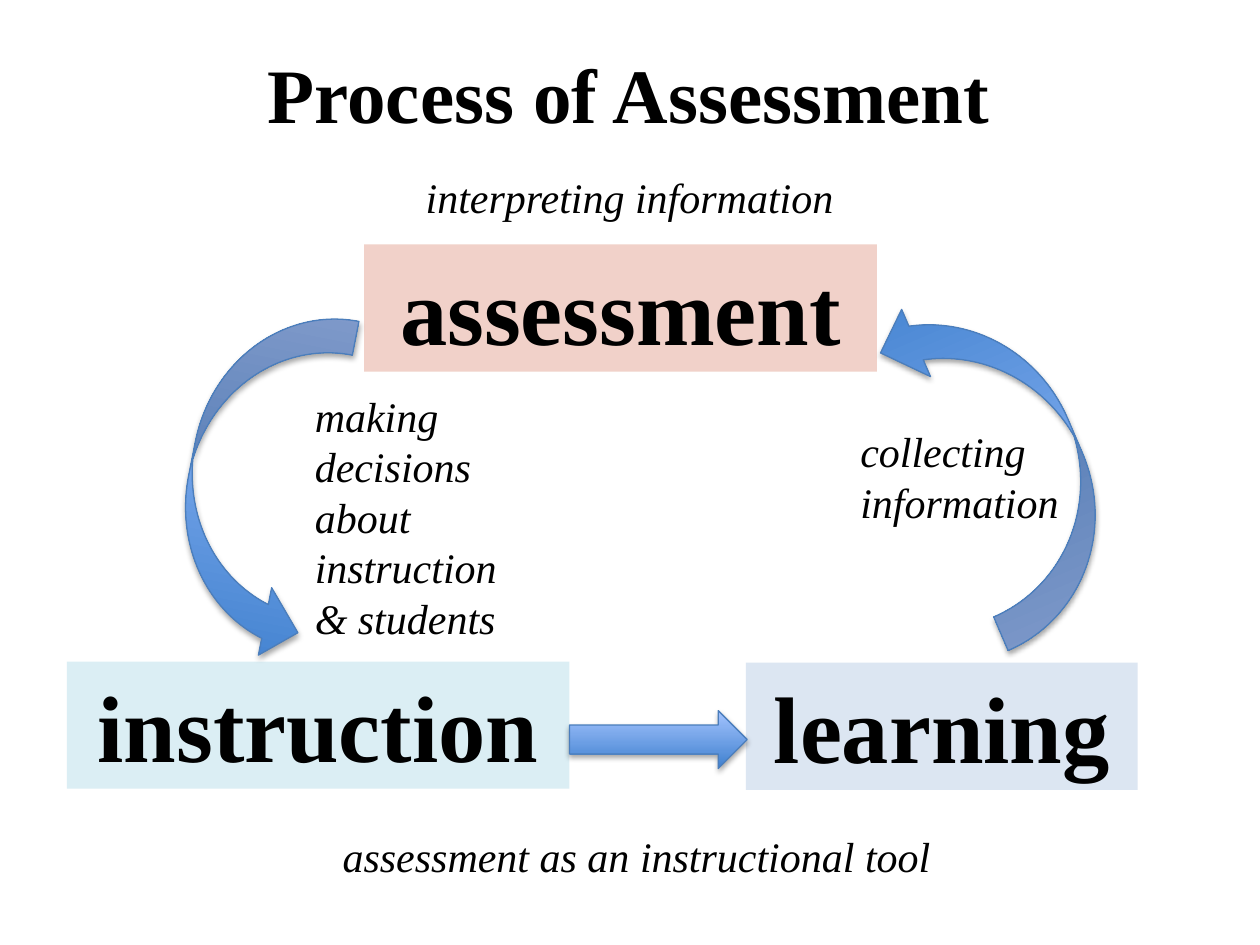
from dataclasses import dataclass

import pptx
import pptx.dml.color
import pptx.enum.shapes
import pptx.enum.text
import pptx.oxml
import pptx.util

Inches = pptx.util.Inches
Pt = pptx.util.Pt
RGB = pptx.dml.color.RGBColor.from_string
ALIGN = pptx.enum.text.PP_ALIGN
ANCHOR = pptx.enum.text.MSO_ANCHOR
SHAPE = pptx.enum.shapes.MSO_SHAPE


@dataclass(frozen=True)
class Theme:
    font: str = "Times New Roman"
    ink: str = "000000"
    instruction: str = "DBEEF4"
    learning: str = "DCE6F2"
    assessment: str = "F1D1C9"
    arrow_dark: str = "3F80CE"
    arrow_light: str = "A4C4FF"
    arrow_line: str = "4B7EBC"
    title_size: int = 44
    stage_size: int = 54
    note_size: int = 24


THEME = Theme()

SHADOW = (
    '<a:effectLst xmlns:a="http://schemas.openxmlformats.org/drawingml/2006/main">'
    '<a:outerShdw blurRad="40000" dist="23000" dir="5400000" rotWithShape="0">'
    '<a:srgbClr val="000000"><a:alpha val="35000"/></a:srgbClr>'
    "</a:outerShdw></a:effectLst>"
)


def add_text(s, box, text, size, bold=False, italic=False, align=ALIGN.LEFT, wrap=True):
    sp = s.shapes.add_textbox(*map(Inches, box))
    tf = sp.text_frame
    tf.word_wrap = wrap
    tf.auto_size = pptx.enum.text.MSO_AUTO_SIZE.SHAPE_TO_FIT_TEXT
    p = tf.paragraphs[0]
    p.alignment = align
    r = p.add_run()
    r.text = text
    r.font.name = THEME.font
    r.font.size = Pt(size)
    r.font.bold = bold
    r.font.italic = italic
    r.font.color.rgb = RGB(THEME.ink)
    return sp


def add_title(s, box, text):
    sp = add_text(s, box, text, THEME.title_size, bold=True, align=ALIGN.CENTER)
    sp.text_frame.auto_size = pptx.enum.text.MSO_AUTO_SIZE.NONE
    sp.text_frame.vertical_anchor = ANCHOR.MIDDLE


def add_stage(s, box, text, color):
    sp = add_text(s, box, text, THEME.stage_size, bold=True, align=ALIGN.CENTER, wrap=False)
    sp.fill.solid()
    sp.fill.fore_color.rgb = RGB(color)


def add_arrow(s, box, kind, rotation=0):
    sp = s.shapes.add_shape(kind, *map(Inches, box))
    sp.rotation = rotation
    sp.fill.gradient()
    sp.fill.gradient_angle = 90
    stops = sp.fill.gradient_stops
    for stop, position, color in zip(stops, (0, 1), (THEME.arrow_dark, THEME.arrow_light)):
        stop.position = position
        stop.color.rgb = RGB(color)
    sp.line.color.rgb = RGB(THEME.arrow_line)
    sp.line.width = Pt(0.75)
    sp._element.spPr.append(pptx.oxml.parse_xml(SHADOW))


def add_note(s, box, text):
    add_text(s, box, text, THEME.note_size, italic=True)


def add_cycle(s):
    add_stage(s, (0.53, 5.25, 3.99, 1.01), "instruction", THEME.instruction)
    add_stage(s, (5.92, 5.26, 3.11, 1.01), "learning", THEME.learning)
    add_stage(s, (2.89, 1.94, 4.07, 1.01), "assessment", THEME.assessment)
    add_arrow(s, (4.52, 5.64, 1.41, 0.46), SHAPE.RIGHT_ARROW)
    add_arrow(s, (1.5, 2.42, 1.09, 2.79), SHAPE.CURVED_RIGHT_ARROW, 11.1)
    add_arrow(s, (7.39, 2.19, 1.16, 2.86), SHAPE.CURVED_RIGHT_ARROW, 156.8)


def add_notes(s):
    add_note(s, (2.62, 6.54, 4.92, 0.5), "assessment as an instructional tool")
    add_note(s, (6.73, 3.33, 2, 0.91), "collecting information")
    add_note(s, (3.28, 1.31, 4.06, 0.5), "interpreting information")
    add_note(s, (2.4, 3.05, 1.9, 2.12), "making decisions about instruction & students")


def main():
    prs = pptx.Presentation()
    prs.slide_width = Inches(10)
    prs.slide_height = Inches(7.5)
    s = prs.slides.add_slide(prs.slide_layouts[6])
    add_title(s, (0.75, 0.16, 8.48, 1.15), "Process of Assessment")
    add_cycle(s)
    add_notes(s)
    prs.save("out.pptx")


if __name__ == "__main__":
    main()
